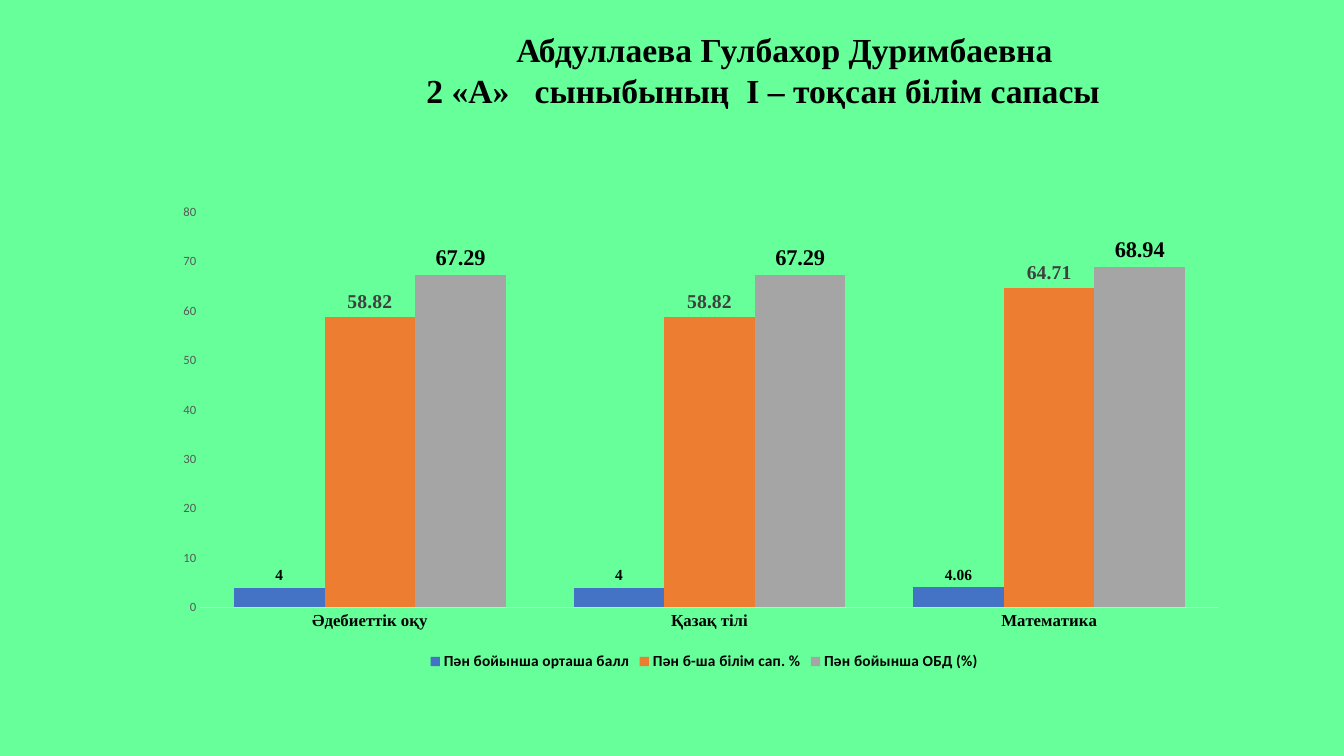
import pptx
import pptx.chart.data
import pptx.dml.color
import pptx.enum.chart
import pptx.enum.text
import pptx.oxml
import pptx.oxml.ns
import pptx.util

COLORS = {
    "background": "66FF99",
    "text": "000000",
    "muted": "595959",
    "dark": "404040",
    "axis": "D9D9D9",
    "score": "4472C4",
    "quality": "ED7D31",
    "level": "A5A5A5",
}
SERIF = "Times New Roman"
SANS = "Calibri"
COLUMNS = 80
ROWS = 45

TITLE_LINES = [
    (0.82, [("Абдуллаева Гулбахор Дуримбаевна", 0)]),
    (0.4, [("2 «А»", 0), (" ", 12), ("сыныбының", 0), (" ", 6),
           ("І – тоқсан білім сапасы", 0)]),
]
SUBJECTS = ["Әдебиеттік оқу", "Қазақ тілі", "Математика"]
SERIES = [
    ("Пән бойынша орташа балл", [4, 4, 4.06], "score", 11, "text"),
    ("Пән б-ша білім сап. %", [58.82, 58.82, 64.71], "quality", 14, "dark"),
    ("Пән бойынша ОБД (%)", [67.29, 67.29, 68.94], "level", 16, "text"),
]
PLOT_AREA = {"x": 0.03, "y": 0.04, "w": 0.95, "h": 0.82}


class QualitySlide:
    def __init__(self, deck):
        self.column = deck.slide_width / COLUMNS
        self.row = deck.slide_height / ROWS
        self.page = deck.slides.add_slide(deck.slide_layouts[5])
        fill = self.page.background.fill
        fill.solid()
        fill.fore_color.rgb = self.color("background")

    def color(self, name):
        return pptx.dml.color.RGBColor.from_string(COLORS[name])

    def place(self, left, top, width, height):
        return (round(left * self.column), round(top * self.row),
                round(width * self.column), round(height * self.row))

    def style(self, font, face, size, color, bold=False):
        font.name = face
        font.size = pptx.util.Pt(size)
        font.bold = bold
        font.color.rgb = self.color(color)

    def title(self, lines, area):
        box = self.page.shapes.title
        box.left, box.top, box.width, box.height = self.place(*area)
        frame = box.text_frame
        frame.word_wrap = True
        frame.auto_size = pptx.enum.text.MSO_AUTO_SIZE.NONE
        frame.vertical_anchor = pptx.enum.text.MSO_ANCHOR.TOP
        for index, (indent, pieces) in enumerate(lines):
            para = frame.add_paragraph() if index else frame.paragraphs[0]
            para.alignment = pptx.enum.text.PP_ALIGN.CENTER
            para.line_spacing = pptx.util.Pt(29.3)
            para.space_before = pptx.util.Pt(0)
            properties = para._p.get_or_add_pPr()
            properties.set("marL", str(pptx.util.Inches(indent)))
            properties.set("indent", "0")
            for text, spacing in pieces:
                span = para.add_run()
                span.text = text
                self.style(span.font, SERIF, 24, "text", True)
                if spacing:
                    span._r.get_or_add_rPr().set("spc", str(spacing * 100))

    def chart(self, categories, series, area):
        data = pptx.chart.data.CategoryChartData()
        data.categories = categories
        for name, values, *_ in series:
            data.add_series(name, values)
        kind = pptx.enum.chart.XL_CHART_TYPE.COLUMN_CLUSTERED
        chart = self.page.shapes.add_chart(kind, *self.place(*area), data).chart
        self.style(chart.font, SANS, 10, "text")
        chart.has_title = False
        self.legend(chart)
        self.axes(chart)
        self.plot_area(chart)
        plot = chart.plots[0]
        plot.gap_width = 75
        plot.overlap = 0
        plot.vary_by_categories = False
        for bars, (_, _, fill, size, color) in zip(plot.series, series):
            self.bars(bars, fill, size, color)

    def legend(self, chart):
        chart.has_legend = True
        chart.legend.position = pptx.enum.chart.XL_LEGEND_POSITION.BOTTOM
        chart.legend.include_in_layout = False
        self.style(chart.legend.font, SANS, 11, "text", True)

    def axes(self, chart):
        for axis in (chart.category_axis, chart.value_axis):
            axis.has_major_gridlines = False
            axis.major_tick_mark = pptx.enum.chart.XL_TICK_MARK.NONE
            axis.minor_tick_mark = pptx.enum.chart.XL_TICK_MARK.NONE
        subjects, values = chart.category_axis, chart.value_axis
        self.style(subjects.tick_labels.font, SERIF, 12, "text", True)
        subjects.format.line.color.rgb = self.color("axis")
        subjects.format.line.width = pptx.util.Pt(0.75)
        self.style(values.tick_labels.font, SANS, 9, "muted")
        values.format.line.fill.background()
        values.minimum_scale = 0
        values.maximum_scale = 80
        values.major_unit = 10

    def plot_area(self, chart):
        parts = [("layoutTarget", "inner"), ("xMode", "edge"), ("yMode", "edge")]
        parts += PLOT_AREA.items()
        manual = "".join(f'<c:{tag} val="{value}"/>' for tag, value in parts)
        namespace = pptx.oxml.ns.nsdecls("c")
        layout = pptx.oxml.parse_xml(
            f"<c:layout {namespace}><c:manualLayout>{manual}</c:manualLayout></c:layout>")
        area = chart._chartSpace.chart.plotArea
        for previous in area.findall(pptx.oxml.ns.qn("c:layout")):
            area.remove(previous)
        area.insert(0, layout)

    def bars(self, bars, fill, size, color):
        bars.format.fill.solid()
        bars.format.fill.fore_color.rgb = self.color(fill)
        bars.format.line.fill.background()
        labels = bars.data_labels
        labels.show_value = True
        labels.position = pptx.enum.chart.XL_LABEL_POSITION.OUTSIDE_END
        self.style(labels.font, SERIF, size, color, True)


def main():
    deck = pptx.Presentation()
    deck.slide_width = pptx.util.Inches(13.33)
    deck.slide_height = pptx.util.Inches(7.5)
    slide = QualitySlide(deck)
    slide.title(TITLE_LINES, (21.6, 1.38, 45.24, 5.46))
    slide.chart(SUBJECTS, SERIES, (10, 11.5, 63.84, 28.68))
    deck.save("out.pptx")


if __name__ == "__main__":
    main()
